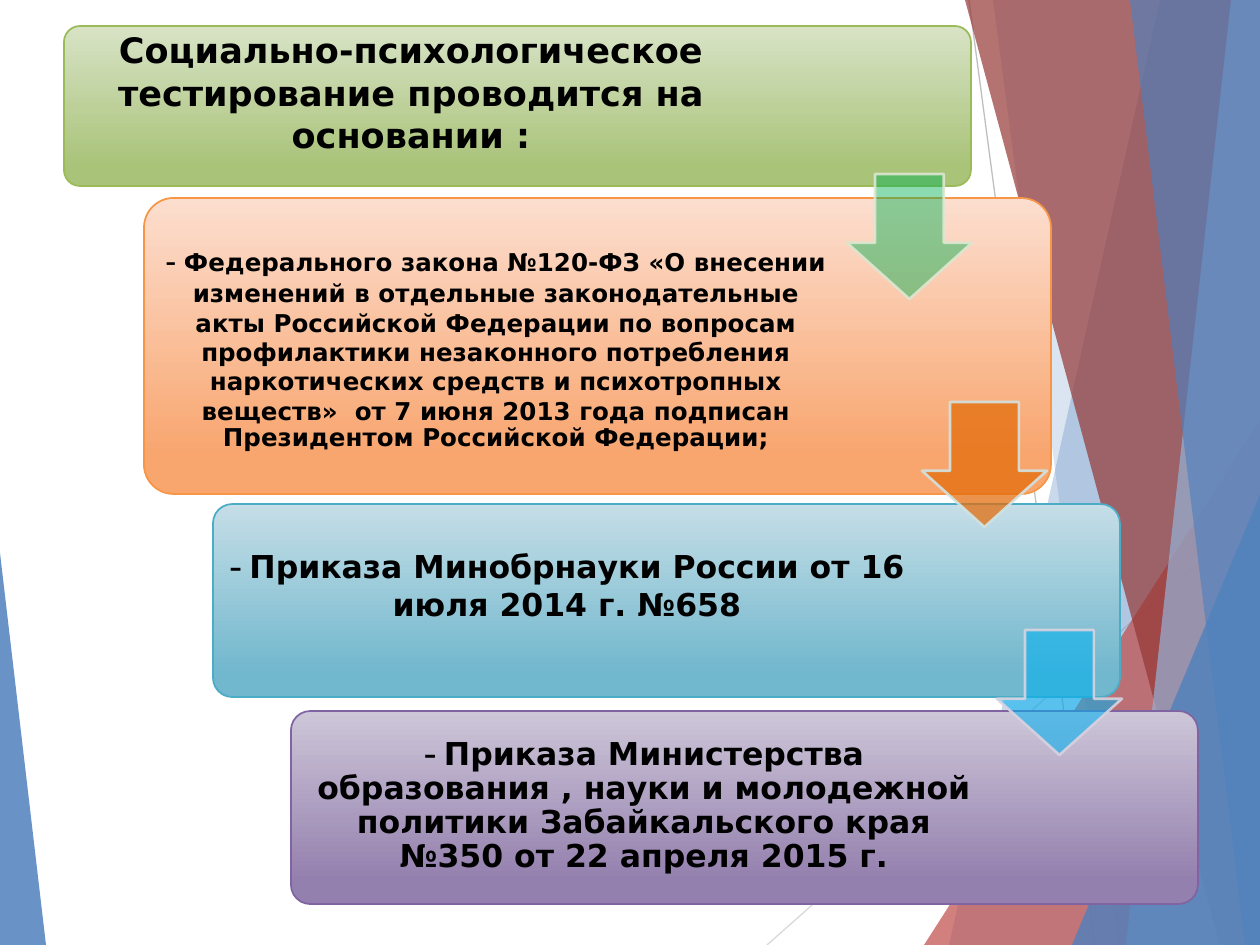
from lxml.etree import SubElement
from pptx import Presentation
from pptx.dml.color import RGBColor
from pptx.enum.shapes import MSO_CONNECTOR, MSO_SHAPE as SHAPE
from pptx.enum.text import MSO_ANCHOR, PP_ALIGN
from pptx.oxml.ns import qn
from pptx.util import Emu, Pt

W, H = 1260, 945
SCALE = 914400 / 126
SANS, SERIF, DASH = "DejaVu Sans", "Times New Roman", "Cabin"
C = {
    "black": "000000", "gray": "BFBFBF", "pale": "D9D9D9",
    "blue": "4F81BD", "sky": "95B3D7", "red": "C0504D", "wine": "953735",
    "green": "9BBB59", "green_top": "D8E3C6", "green_low": "A9C379",
    "orange": "F79646", "orange_top": "FCDECF", "orange_low": "F8A56E",
    "aqua": "4BACC6", "aqua_top": "C5DEE7", "aqua_low": "71B7CD",
    "purple": "8064A2", "purple_top": "CDC6D8", "purple_low": "9480AE",
    "arrow1": "00B050", "edge1": "DEE7D1",
    "arrow2": "E46C0A", "edge2": "D2E3E2",
    "arrow3": "00B0F0", "edge3": "D8D3E0",
}

RAYS = [((969, 0), (1095, H), "gray"), ((W, 508), (767, H), "pale")]
FACETS = [
    ("band", 1160, 949, "blue", 30),
    ("band", 993, 1118, "blue", 20),
    ("wedge", (924, 420, 336, 525), 1, "red", 72),
    ("band", 965, 1220, "wine", 70),
    ("band", 1231, 1126, "sky", 70),
    ("band", 1130, 1245, "blue", 65),
    ("wedge", (1072, 495, 188, 450), 1, "blue", 80),
    ("wedge", (0, 553, 46, 392), 0, "blue", 85),
]

CARD_W = 907
CARDS = [
    dict(at=(64, 26), h=160, hue="green", text=(69, 30, 684, 152), low=28, paras=[
        (1, [("Социально-психологическое тестирование проводится на основании :", 20, SANS)])]),
    dict(at=(144, 198), h=296, hue="orange", text=(152, 207, 688, 278), low=0, paras=[
        (1, [("- ", 18, SERIF),
             ("Федерального закона №120-ФЗ «О внесении изменений в отдельные законодательные "
              "акты Российской Федерации по вопросам профилактики незаконного потребления "
              "наркотических средств и психотропных веществ»  от 7 июня 2013 года подписан",
              14, SANS)]),
        (0.9, [("Президентом Российской Федерации;", 14, SANS)])]),
    dict(at=(213, 504), h=193, hue="aqua", text=(219, 510, 696, 181), low=32, paras=[
        (1, [("- ", 18, DASH),
             ("Приказа Минобрнауки России от 16 июля 2014 г. №658", 18, SANS)])]),
    dict(at=(291, 711), h=193, hue="purple", text=(297, 716, 694, 181), low=0, paras=[
        (0.9, [("- ", 18, DASH),
               ("Приказа Министерства образования , науки и молодежной политики "
                "Забайкальского края №350 от 22 апреля 2015 г.", 18, SANS)])]),
]
ARROW = 125
ARROWS = [(847, 174, 45), (922, 402, 73), (997, 630, 56)]


def px(*values):
    return [Emu(round(v * SCALE)) for v in values]


def rgb(name):
    return RGBColor.from_string(C[name])


def set_alpha(fill, percent):
    color = fill._xPr.find(qn("a:solidFill"))[0]
    SubElement(color, qn("a:alpha")).set("val", str(percent * 1000))


def paint(s, name, percent):
    s.shadow.inherit = False
    s.fill.solid()
    s.fill.fore_color.rgb = rgb(name)
    set_alpha(s.fill, percent)
    s.line.fill.background()


prs = Presentation()
prs.slide_width, prs.slide_height = px(W, H)
shapes = prs.slides.add_slide(prs.slide_layouts[6]).shapes

for start, end, color in RAYS:
    ray = shapes.add_connector(MSO_CONNECTOR.STRAIGHT, *px(*start, *end))
    ray.line.color.rgb = rgb(color)
    ray.line.width = Pt(0.75)
    SubElement(ray._element.spPr, qn("a:effectLst"))

for kind, a, b, color, percent in FACETS:
    if kind == "band":
        builder = shapes.build_freeform(a, 0, scale=SCALE)
        builder.add_line_segments([(W, 0), (W, H), (b, H)], close=True)
        s = builder.convert_to_shape()
    else:
        s = shapes.add_shape(SHAPE.ISOSCELES_TRIANGLE, *px(*a))
        s.adjustments[0] = b
    paint(s, color, percent)

for card in CARDS:
    hue = card["hue"]
    s = shapes.add_shape(SHAPE.ROUNDED_RECTANGLE, *px(*card["at"], CARD_W, card["h"]))
    s.adjustments[0] = 0.1
    s.shadow.inherit = False
    s.fill.gradient()
    s.fill.gradient_angle = 270
    for stop, (pos, part) in zip(s.fill.gradient_stops, [(0, "top"), (0.88, "low")]):
        stop.position = pos
        stop.color.rgb = rgb(f"{hue}_{part}")
    s.line.color.rgb = rgb(hue)
    s.line.width = Pt(1)

    tf = shapes.add_textbox(*px(*card["text"])).text_frame
    tf.word_wrap = True
    tf.vertical_anchor = MSO_ANCHOR.MIDDLE
    tf.margin_left, tf.margin_right, tf.margin_top, tf.margin_bottom = px(
        10, 10, 10, 10 + card["low"])
    for i, (spacing, runs) in enumerate(card["paras"]):
        p = tf.add_paragraph() if i else tf.paragraphs[0]
        p.alignment = PP_ALIGN.CENTER
        p.line_spacing = spacing
        p.font.bold = True
        p.font.color.rgb = rgb("black")
        for text, size, face in runs:
            r = p.add_run()
            r.text = text
            r.font.size = Pt(size)
            r.font.name = face

for i, (x, y, percent) in enumerate(ARROWS, 1):
    s = shapes.add_shape(SHAPE.DOWN_ARROW, *px(x, y, ARROW, ARROW))
    s.adjustments[0], s.adjustments[1] = 0.55, 0.45
    paint(s, f"arrow{i}", percent)
    s.line.color.rgb = rgb(f"edge{i}")
    s.line.width = Pt(1.5)
    set_alpha(s.line.fill, 90)

prs.save("out.pptx")
